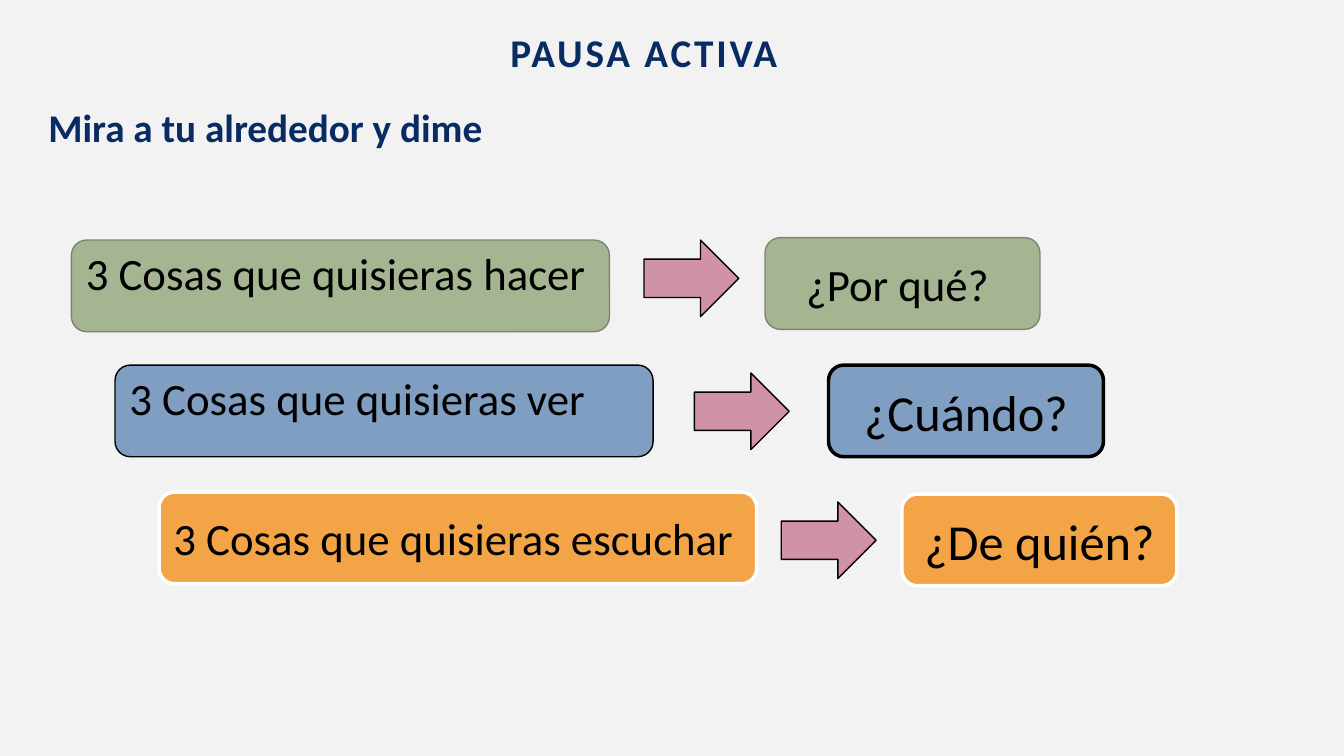
"""Build the PAUSA ACTIVA slide: three prompts, each with an arrow to its question."""
from dataclasses import dataclass

from pptx import Presentation
from pptx import util as u
from pptx.dml.color import RGBColor
from pptx.enum import shapes, text

NAVY = RGBColor(0x07, 0x2B, 0x62)
BLACK = RGBColor(0, 0, 0)
WHITE = RGBColor(0xFF, 0xFF, 0xFF)
GREY = RGBColor(0xF2, 0xF2, 0xF2)
GREEN = RGBColor(0xA5, 0xB5, 0x92)
DARK_GREEN = RGBColor(0x7A, 0x86, 0x6C)
BLUE = RGBColor(0x80, 0x9E, 0xC2)
ORANGE = RGBColor(0xF3, 0xA4, 0x47)
PINK = RGBColor(0xD0, 0x92, 0xA7)

BOX_H = 2.31
QUESTION_W = 6.93
ARROW_W, ARROW_H = 2.39, 1.93
ALIGN = text.PP_ALIGN
KIND = shapes.MSO_SHAPE


@dataclass
class Box:
    left: float
    top: float
    words: str
    size: float = 32
    border: float = 2.5
    width: float = QUESTION_W
    bottom: float = 0.13


@dataclass
class Row:
    fill: RGBColor
    line: RGBColor
    prompt: Box
    arrow: tuple[float, float]
    question: Box


ROWS = [
    Row(GREEN, DARK_GREEN,
        Box(1.8, 6.05, "3 Cosas que quisieras hacer", border=1, width=13.56, bottom=0.81),
        (16.23, 6.05), Box(19.28, 5.99, "¿Por qué? ", border=1)),
    Row(BLUE, BLACK,
        Box(2.9, 9.2, "3 Cosas que quisieras ver", border=1, width=13.56, bottom=0.81),
        (17.5, 9.4), Box(20.88, 9.2, "¿Cuándo?", size=36)),
    Row(ORANGE, WHITE,
        Box(4.01, 12.4, "3 Cosas que quisieras escuchar", width=15.06),
        (19.69, 12.65), Box(22.73, 12.45, "¿De quién?", size=36)),
]


def put_text(sp, words: str, *, size: float, color: RGBColor = BLACK, bold: bool = False,
             align=ALIGN.LEFT, line_spacing: float = 1.0, tracking: float = 0,
             bottom: float = 0.13) -> None:
    tf = sp.text_frame
    tf.word_wrap = True
    tf.auto_size = text.MSO_AUTO_SIZE.NONE
    tf.vertical_anchor = text.MSO_ANCHOR.MIDDLE
    tf.margin_left = tf.margin_right = u.Cm(0.25)
    tf.margin_top, tf.margin_bottom = u.Cm(0.13), u.Cm(bottom)
    p = tf.paragraphs[0]
    p.alignment, p.line_spacing = align, line_spacing
    p.space_before = u.Pt(0)
    r = p.add_run()
    r.text = words
    r.font.name, r.font.size, r.font.bold = "Calibri", u.Pt(size), bold
    r.font.color.rgb = color
    if tracking:
        r._r.get_or_add_rPr().set("spc", str(int(tracking * 100)))


def add_block(s, kind, left: float, top: float, width: float, height: float,
              fill: RGBColor, line: RGBColor, border: float):
    sp = s.shapes.add_shape(kind, u.Cm(left), u.Cm(top), u.Cm(width), u.Cm(height))
    sp.shadow.inherit = False
    sp.fill.solid()
    sp.fill.fore_color.rgb = fill
    sp.line.color.rgb, sp.line.width = line, u.Pt(border)
    return sp


def add_box(s, box: Box, row: Row, align) -> None:
    sp = add_block(s, KIND.ROUNDED_RECTANGLE, box.left, box.top, box.width, BOX_H,
                   row.fill, row.line, box.border)
    put_text(sp, box.words, size=box.size, align=align, bottom=box.bottom)


def add_row(s, row: Row) -> None:
    add_box(s, row.prompt, row, ALIGN.JUSTIFY)
    add_block(s, KIND.RIGHT_ARROW, *row.arrow, ARROW_W, ARROW_H, PINK, BLACK, 1)
    add_box(s, row.question, row, ALIGN.CENTER)


def main() -> None:
    prs = Presentation()
    prs.slide_width, prs.slide_height = u.Cm(33.87), u.Cm(19.05)
    s = prs.slides.add_slide(prs.slide_layouts.get_by_name("Title Only"))
    s.background.fill.solid()
    s.background.fill.fore_color.rgb = GREY

    title = s.shapes.title
    title.left, title.top = u.Cm(12.04), u.Cm(0.79)
    title.width, title.height = u.Cm(8.38), u.Cm(1.17)
    put_text(title, "PAUSA ACTIVA", size=28, color=NAVY, bold=True,
             align=ALIGN.CENTER, line_spacing=0.9, tracking=2)

    subtitle = s.shapes.add_textbox(u.Cm(0.97), u.Cm(2.69), u.Cm(13.87), u.Cm(1.17))
    put_text(subtitle, "Mira a tu alrededor y dime", size=28, color=NAVY, bold=True,
             line_spacing=0.9)

    for row in ROWS:
        add_row(s, row)
    prs.save("out.pptx")


if __name__ == "__main__":
    main()
